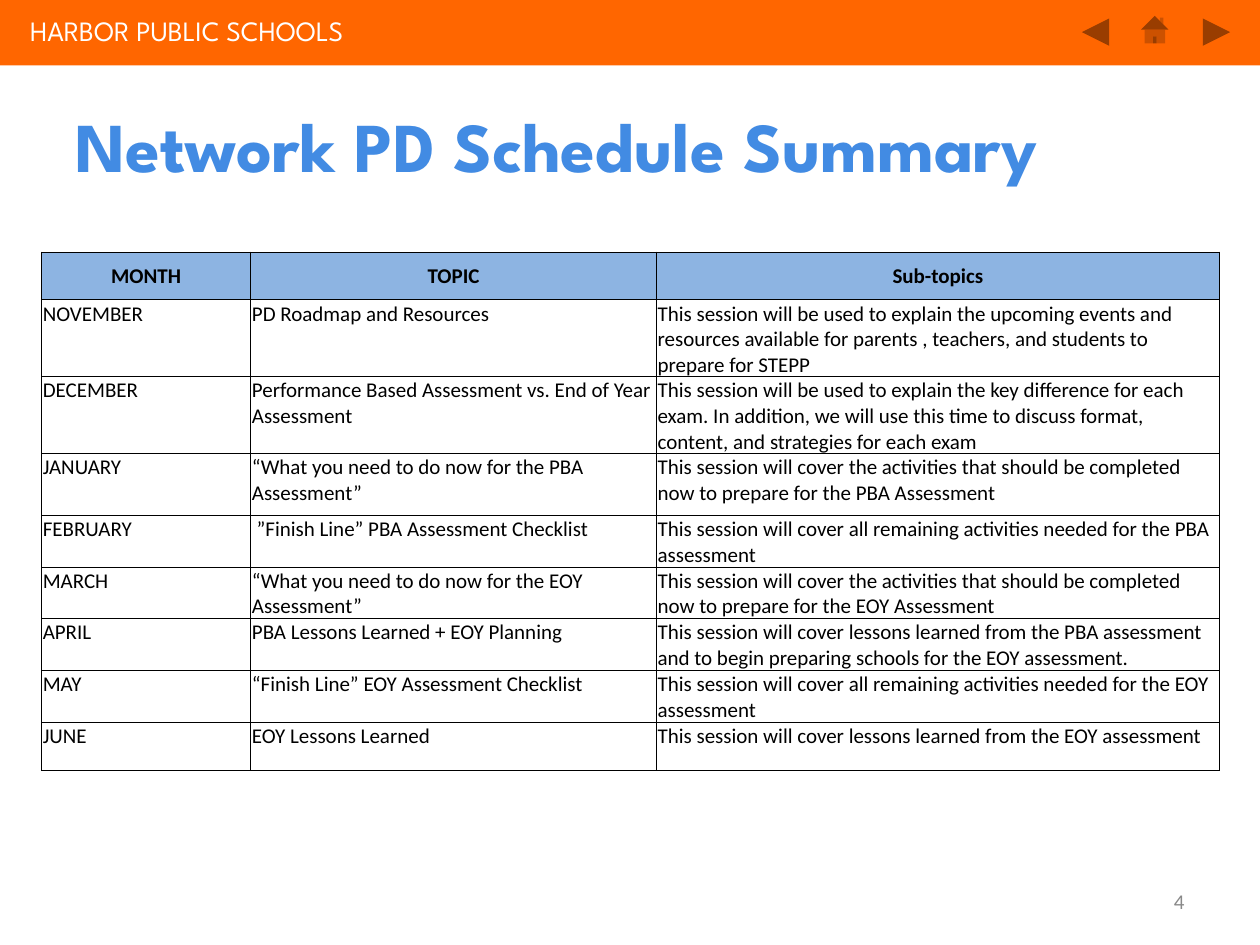
from typing import NamedTuple

from lxml.etree import SubElement
from pptx import Presentation
from pptx.dml.color import RGBColor
from pptx.enum.shapes import MSO_SHAPE as Shape
from pptx.enum.text import MSO_ANCHOR as Anchor, PP_ALIGN as Align
from pptx.oxml.ns import qn
from pptx.util import Inches, Pt

ORANGE = RGBColor(0xFF, 0x66, 0x00)
WHITE = RGBColor(0xFF, 0xFF, 0xFF)
BLACK = RGBColor(0x00, 0x00, 0x00)
GRAY = RGBColor(0x89, 0x89, 0x89)
BLUE = RGBColor(0x42, 0x8B, 0xE3)
PALE = RGBColor(0x8D, 0xB4, 0xE2)

BODY = "Calibri"
HEAD = "League Spartan"


class Box(NamedTuple):
    left: float
    top: float
    width: float
    height: float

    def lengths(self) -> list:
        return [Inches(value) for value in self]


class Block(NamedTuple):
    kind: Shape
    box: Box


class Label(NamedTuple):
    text: str
    box: Box
    font: str
    size: int
    color: RGBColor
    bold: bool = False
    align: Align = Align.LEFT
    anchor: Anchor = Anchor.MIDDLE
    pad: float = 0.05


class Session(NamedTuple):
    month: str
    topic: str
    detail: str
    height: float = 0.38


ICON = 0.29
BLOCKS = [
    Block(Shape.RECTANGLE, Box(0, 0, 10.03, 0.52)),
    Block(Shape.ACTION_BUTTON_FORWARD_OR_NEXT, Box(9.51, 0.11, ICON, ICON)),
    Block(Shape.ACTION_BUTTON_BACK_OR_PREVIOUS, Box(8.55, 0.11, ICON, ICON)),
    Block(Shape.ACTION_BUTTON_HOME, Box(9.02, 0.09, ICON, ICON)),
]

LABELS = [
    Label("HARBOR PUBLIC SCHOOLS", Box(0.14, 0.06, 8.32, 0.37), HEAD, 16, WHITE,
          anchor=Anchor.TOP),
    Label("4", Box(7.17, 6.95, 2.33, 0.4), BODY, 12, GRAY, align=Align.RIGHT, pad=0.1),
    Label("Network PD Schedule Summary", Box(0.5, 0.74, 9, 0.82), HEAD, 40, BLUE, bold=True),
]

WIDTHS = [1.66, 3.22, 4.47]
ROWS = [
    Session("MONTH", "TOPIC", "Sub-topics"),
    Session("NOVEMBER", "PD Roadmap and Resources",
            "This session will be used to explain the upcoming events and resources "
            "available for parents , teachers, and students to prepare for STEPP"),
    Session("DECEMBER", "Performance Based Assessment vs. End of Year Assessment",
            "This session will be used to explain the key difference for each exam. "
            "In addition, we will use this time to discuss format, content, and "
            "strategies for each exam"),
    Session("JANUARY", "“What you need to do now for the PBA Assessment”",
            "This session will cover the activities that should be completed now "
            "to prepare for the PBA Assessment", 0.49),
    Session("FEBRUARY", " ”Finish Line” PBA Assessment Checklist",
            "This session will cover all remaining activities needed for the PBA assessment"),
    Session("MARCH", "“What you need to do now for the EOY Assessment”",
            "This session will cover the activities that should be completed now "
            "to prepare for the EOY Assessment"),
    Session("APRIL", "PBA Lessons Learned + EOY Planning",
            "This session will cover lessons learned from the PBA assessment and "
            "to begin preparing schools for the EOY assessment."),
    Session("MAY", "“Finish Line” EOY Assessment Checklist",
            "This session will cover all remaining activities needed for the EOY assessment"),
    Session("JUNE", "EOY Lessons Learned",
            "This session will cover lessons learned from the EOY assessment"),
]


def add_block(slide, block: Block) -> None:
    shape = slide.shapes.add_shape(block.kind, *block.box.lengths())
    shape.shadow.inherit = False
    shape.fill.solid()
    shape.fill.fore_color.rgb = ORANGE
    shape.line.fill.background()


def set_font(font, name: str, size: int, color: RGBColor, bold: bool) -> None:
    font.name, font.size, font.bold = name, Pt(size), bold
    font.color.rgb = color


def add_label(slide, label: Label) -> None:
    frame = slide.shapes.add_textbox(*label.box.lengths()).text_frame
    frame.word_wrap = True
    frame.vertical_anchor = label.anchor
    frame.margin_left = frame.margin_right = Inches(0.1)
    frame.margin_top = frame.margin_bottom = Inches(label.pad)
    para = frame.paragraphs[0]
    para.text = label.text
    para.alignment = label.align
    set_font(para.font, label.font, label.size, label.color, label.bold)


def add_border(cell) -> None:
    """Draw a thin black line on all four sides, ahead of the cell's fill."""
    props = cell._tc.get_or_add_tcPr()
    for spot, side in enumerate(("a:lnL", "a:lnR", "a:lnT", "a:lnB")):
        line = SubElement(props, qn(side), w=str(Pt(0.5)))
        fill = SubElement(line, qn("a:solidFill"))
        SubElement(fill, qn("a:srgbClr"), val=str(BLACK))
        props.insert(spot, line)


def fill_cell(cell, text: str, head: bool) -> None:
    cell.margin_left = cell.margin_right = cell.margin_top = Inches(0.01)
    cell.margin_bottom = 0
    cell.vertical_anchor = Anchor.MIDDLE if head else Anchor.TOP
    if head:
        cell.fill.solid()
        cell.fill.fore_color.rgb = PALE
    else:
        cell.fill.background()
    para = cell.text_frame.paragraphs[0]
    para.text = text
    para.alignment = Align.CENTER if head else Align.LEFT
    set_font(para.font, BODY, 12, BLACK, head)
    add_border(cell)


def add_schedule(slide, rows: list[Session]) -> None:
    box = Box(0.33, 2, sum(WIDTHS), sum(row.height for row in rows))
    table = slide.shapes.add_table(len(rows), len(WIDTHS), *box.lengths()).table
    table.horz_banding = False
    for col, width in zip(table.columns, WIDTHS):
        col.width = Inches(width)
    for index, row in enumerate(rows):
        table.rows[index].height = Inches(row.height)
        for col, text in enumerate((row.month, row.topic, row.detail)):
            fill_cell(table.cell(index, col), text, index == 0)


def main() -> None:
    deck = Presentation()
    deck.slide_width, deck.slide_height = Inches(10), Inches(7.5)
    slide = deck.slides.add_slide(deck.slide_layouts[6])
    for block in BLOCKS:
        add_block(slide, block)
    for label in LABELS:
        add_label(slide, label)
    add_schedule(slide, ROWS)
    deck.save("out.pptx")


if __name__ == "__main__":
    main()
